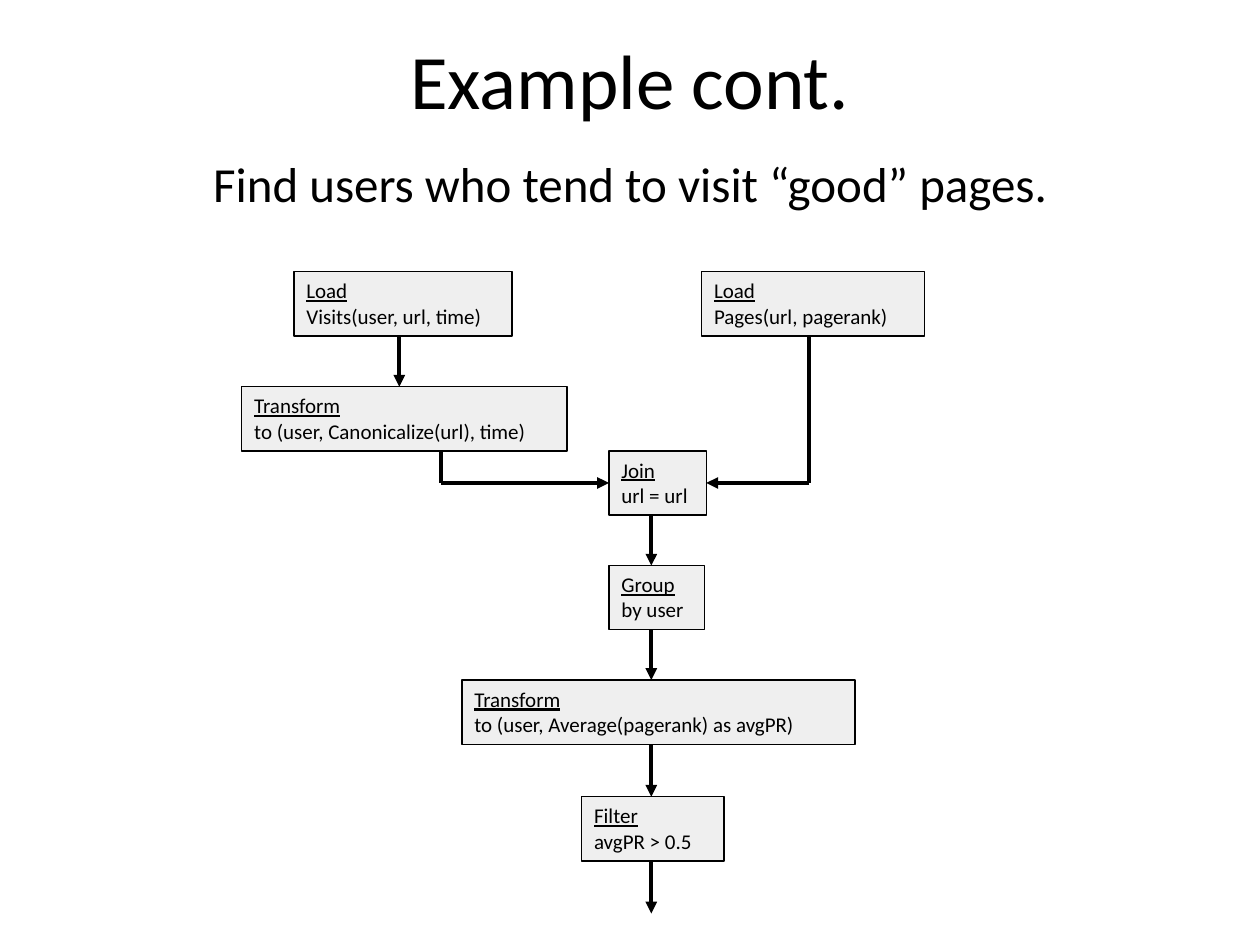
import pptx
import pptx.dml.color
import pptx.enum.shapes
import pptx.enum.text
import pptx.oxml
import pptx.oxml.ns
import pptx.util

Pt = pptx.util.Pt
BLACK = pptx.dml.color.RGBColor(0x00, 0x00, 0x00)
BOX_GRAY = pptx.dml.color.RGBColor(0xEF, 0xEF, 0xEF)
FONT = "Calibri"

BOX_HEIGHT = 36.7
MAIN_X = 372.2  # vertical arrows below the join
JOIN_Y = 276
VISITS_X, CANONICAL_X, PAGES_X = 228.2, 252, 462.2

# name: (operation, detail, left, top, width)
STEPS = {
    "canonicalize": ("Transform", "to (user, Canonicalize(url), time)", 138.2, 221, 185.8),
    "pages": ("Load", "Pages(url, pagerank)", 401, 155.3, 127.4),
    "visits": ("Load", "Visits(user, url, time)", 168, 155.3, 124.6),
    "join": ("Join", "url = url", 348, 257.65, 55.6),
    "group": ("Group", "by user", 348, 323.2, 54.7),
    "average": ("Transform", "to (user, Average(pagerank) as avgPR)", 264, 388.6, 224.6),
    "filter": ("Filter", "avgPR > 0.5", 332.4, 455.3, 81.4),
}


def add_run(paragraph, text, size, underline=False):
    run = paragraph.add_run()
    run.text = text
    run.font.name = FONT
    run.font.size = Pt(size)
    run.font.color.rgb = BLACK
    run.font.underline = underline


def add_heading(slide, text, left, top, width, height, size):
    """Add one centred line of text."""
    text_box = slide.shapes.add_textbox(Pt(left), Pt(top), Pt(width), Pt(height))
    frame = text_box.text_frame
    frame.word_wrap = True
    frame.vertical_anchor = pptx.enum.text.MSO_ANCHOR.MIDDLE
    paragraph = frame.paragraphs[0]
    paragraph.alignment = pptx.enum.text.PP_ALIGN.CENTER
    add_run(paragraph, text, size)


def add_step(slide, operation, detail, left, top, width):
    """Add a box with an underlined operation above its detail."""
    shape = slide.shapes.add_shape(
        pptx.enum.shapes.MSO_SHAPE.RECTANGLE, Pt(left), Pt(top), Pt(width), Pt(BOX_HEIGHT))
    shape.shadow.inherit = False
    shape.fill.solid()
    shape.fill.fore_color.rgb = BOX_GRAY
    shape.line.color.rgb = BLACK
    shape.line.width = Pt(0.75)
    frame = shape.text_frame
    frame.word_wrap = True
    frame.vertical_anchor = pptx.enum.text.MSO_ANCHOR.TOP
    for paragraph, text in ((frame.paragraphs[0], operation), (frame.add_paragraph(), detail)):
        paragraph.alignment = pptx.enum.text.PP_ALIGN.LEFT
        add_run(paragraph, text, 12, underline=text == operation)
    return shape


def add_line(slide, start, end, arrow=True):
    connector = slide.shapes.add_connector(
        pptx.enum.shapes.MSO_CONNECTOR.STRAIGHT, *map(Pt, start + end))
    connector.line.color.rgb = BLACK
    connector.line.width = Pt(2.25)
    if arrow:
        line = connector.line._get_or_add_ln()
        line.append(pptx.oxml.parse_xml(
            f'<a:tailEnd {pptx.oxml.ns.nsdecls("a")} type="triangle"/>'))
    connector._element.spPr.append(pptx.oxml.parse_xml(
        f'<a:effectLst {pptx.oxml.ns.nsdecls("a")}/>'))
    return connector


def add_flow(slide):
    boxes = {name: add_step(slide, *step) for name, step in STEPS.items()}
    tops = {name: step[3] for name, step in STEPS.items()}
    bottoms = {name: top + BOX_HEIGHT for name, top in tops.items()}

    add_line(slide, (VISITS_X, bottoms["visits"]), (VISITS_X, tops["canonicalize"]))
    for x, source, side in ((CANONICAL_X, "canonicalize", 1), (PAGES_X, "pages", 3)):
        add_line(slide, (x, JOIN_Y), (x, bottoms[source]), arrow=False)
        arrow = add_line(slide, (x, JOIN_Y), (MAIN_X, JOIN_Y))
        arrow.end_connect(boxes["join"], side)

    chain = ("join", "group", "average", "filter")
    ends = [tops[name] for name in chain[1:]] + [522]
    for name, end in zip(chain, ends):
        add_line(slide, (MAIN_X, bottoms[name]), (MAIN_X, end))


def main():
    presentation = pptx.Presentation()
    presentation.slide_width = Pt(720)
    presentation.slide_height = Pt(540)
    slide = presentation.slides.add_slide(presentation.slide_layouts[6])
    add_flow(slide)
    add_heading(slide, "Example cont.", 54, 0, 612, 90, 44)
    add_heading(slide, "Find users who tend to visit “good” pages.", 0, 84.2, 720, 41, 28)
    presentation.save("out.pptx")


if __name__ == "__main__":
    main()
